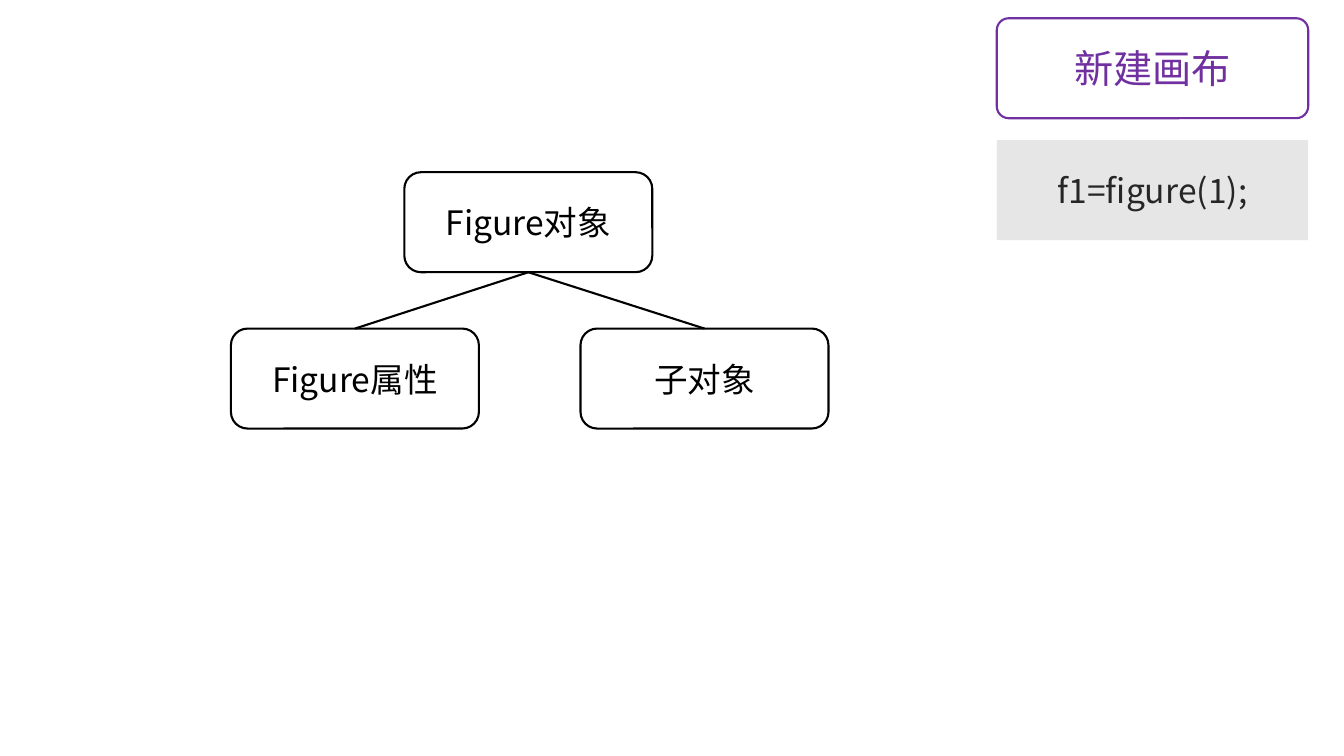
from lxml.etree import SubElement
from pptx import Presentation
from pptx.dml.color import RGBColor
from pptx.enum.shapes import MSO_CONNECTOR, MSO_SHAPE
from pptx.enum.text import MSO_ANCHOR, PP_ALIGN
from pptx.oxml.ns import qn
from pptx.util import Cm, Pt

FONT = "Noto Sans CJK SC"
BOX_H = 2.52


def rgb(value):
    return RGBColor.from_string(value)


def add_box(kind, left, top, width, text, size, color, fill="FFFFFF", line=None):
    sp = s.shapes.add_shape(kind, Cm(left), Cm(top), Cm(width), Cm(BOX_H))
    sp.shadow.inherit = False
    sp.fill.solid()
    sp.fill.fore_color.rgb = rgb(fill)
    if line:
        sp.line.color.rgb = rgb(line)
        sp.line.width = Pt(1.5)
    else:
        sp.line.fill.background()
    tf = sp.text_frame
    tf.vertical_anchor = MSO_ANCHOR.MIDDLE
    p = tf.paragraphs[0]
    p.text = text
    p.alignment = PP_ALIGN.CENTER
    p.font.size = Pt(size)
    p.font.color.rgb = rgb(color)
    p.font.name = FONT
    SubElement(p._p.pPr.find(qn("a:defRPr")), qn("a:ea"), typeface=FONT)
    return sp


prs = Presentation()
prs.slide_width = Cm(33.87)
prs.slide_height = Cm(19.05)
s = prs.slides.add_slide(prs.slide_layouts[6])

figure, *children = [
    add_box(MSO_SHAPE.ROUNDED_RECTANGLE, left, top, 6.25, text, 24, "000000", line="000000")
    for left, top, text in [
        (10.19, 4.34, "Figure对象"),
        (5.82, 8.28, "Figure属性"),
        (14.63, 8.28, "子对象"),
    ]
]

for child in children:
    cxn = s.shapes.add_connector(MSO_CONNECTOR.STRAIGHT, 0, 0, 0, 0)
    cxn.begin_connect(figure, 2)
    cxn.end_connect(child, 0)
    cxn.line.color.rgb = rgb("000000")
    cxn.line.width = Pt(1.5)
    SubElement(cxn._element.spPr, qn("a:effectLst"))

heading = add_box(MSO_SHAPE.ROUNDED_RECTANGLE, 25.12, 0.46, 7.85, "新建画布", 28, "7030A0", line="7030A0")
heading.adjustments[0] = 0.12
add_box(MSO_SHAPE.RECTANGLE, 25.12, 3.53, 7.85, "f1=figure(1);", 24, "262626", fill="E7E6E6")

prs.save("out.pptx")
